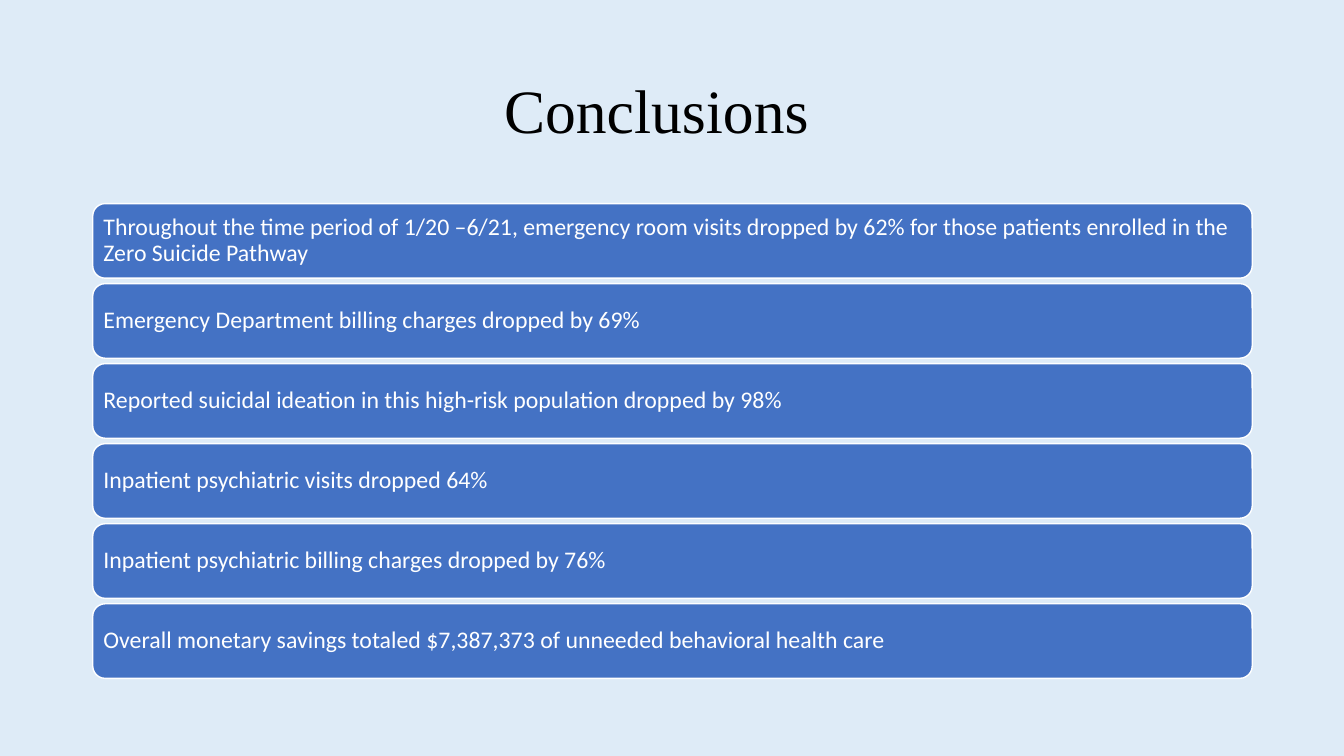
from pptx import Presentation
from pptx import util as u
from pptx.dml.color import RGBColor
from pptx.enum import shapes, text

FINDINGS = [
    "Throughout the time period of 1/20 –6/21, emergency room visits dropped by 62% "
    "for those patients enrolled in the Zero Suicide Pathway",
    "Emergency Department billing charges dropped by 69%",
    "Reported suicidal ideation in this high-risk population dropped by 98%",
    "Inpatient psychiatric visits dropped 64%",
    "Inpatient psychiatric billing charges dropped by 76%",
    "Overall monetary savings totaled $7,387,373 of unneeded behavioral health care",
]


def colour(hex_value):
    return RGBColor.from_string(hex_value)


class Board:
    """Holds the style, the row grid and the current slide."""
    BACKGROUND, BAR, LIGHT, DARK = "DEEBF7", "4472C4", "FFFFFF", "000000"
    TITLE_FONT, BODY_FONT = "Times New Roman", "Calibri"
    LEFT, WIDTH = 0.92, 11.5
    FIRST_ROW, LAST_ROW, BAR_HEIGHT = 2.02, 5.99, 0.74
    ROW_STEP = (LAST_ROW - FIRST_ROW) / (len(FINDINGS) - 1)

    def __init__(self, deck):
        self.page = deck.slides.add_slide(deck.slide_layouts[6])
        fill = self.page.background.fill
        fill.solid()
        fill.fore_color.rgb = colour(self.BACKGROUND)

    def label(self, shape, words, font, size, ink, insets):
        """Fill a shape with one left-aligned paragraph; insets are left, top, right, bottom."""
        frame = shape.text_frame
        frame.word_wrap = True
        frame.vertical_anchor = text.MSO_ANCHOR.MIDDLE
        (frame.margin_left, frame.margin_top,
         frame.margin_right, frame.margin_bottom) = map(u.Inches, insets)
        para = frame.paragraphs[0]
        para.alignment = text.PP_ALIGN.LEFT
        para.line_spacing = 0.9
        span = para.add_run()
        span.text = words
        span.font.name = font
        span.font.size = u.Pt(size)
        span.font.color.rgb = colour(ink)

    def title(self, words):
        box = self.page.shapes.add_textbox(
            *map(u.Inches, (self.LEFT, 0.4, self.WIDTH, 1.45)))
        self.label(box, words, self.TITLE_FONT, 44, self.DARK, (4.08, 0.05, 0.1, 0.05))

    def bar(self, row, words):
        top = self.FIRST_ROW + row * self.ROW_STEP
        bar = self.page.shapes.add_shape(
            shapes.MSO_SHAPE.ROUNDED_RECTANGLE,
            *map(u.Inches, (self.LEFT, top, self.WIDTH, self.BAR_HEIGHT)))
        bar.shadow.inherit = False
        bar.fill.solid()
        bar.fill.fore_color.rgb = colour(self.BAR)
        bar.line.color.rgb = colour(self.LIGHT)
        bar.line.width = u.Pt(1)
        # The rounded corners add about 0.04 inch to each inset.
        self.label(bar, words, self.BODY_FONT, 17, self.LIGHT, (0.07,) * 4)


def main():
    deck = Presentation()
    deck.slide_width, deck.slide_height = u.Inches(13.33), u.Inches(7.5)
    board = Board(deck)
    board.title("Conclusions")
    for row, finding in enumerate(FINDINGS):
        board.bar(row, finding)
    deck.save("out.pptx")


if __name__ == "__main__":
    main()
